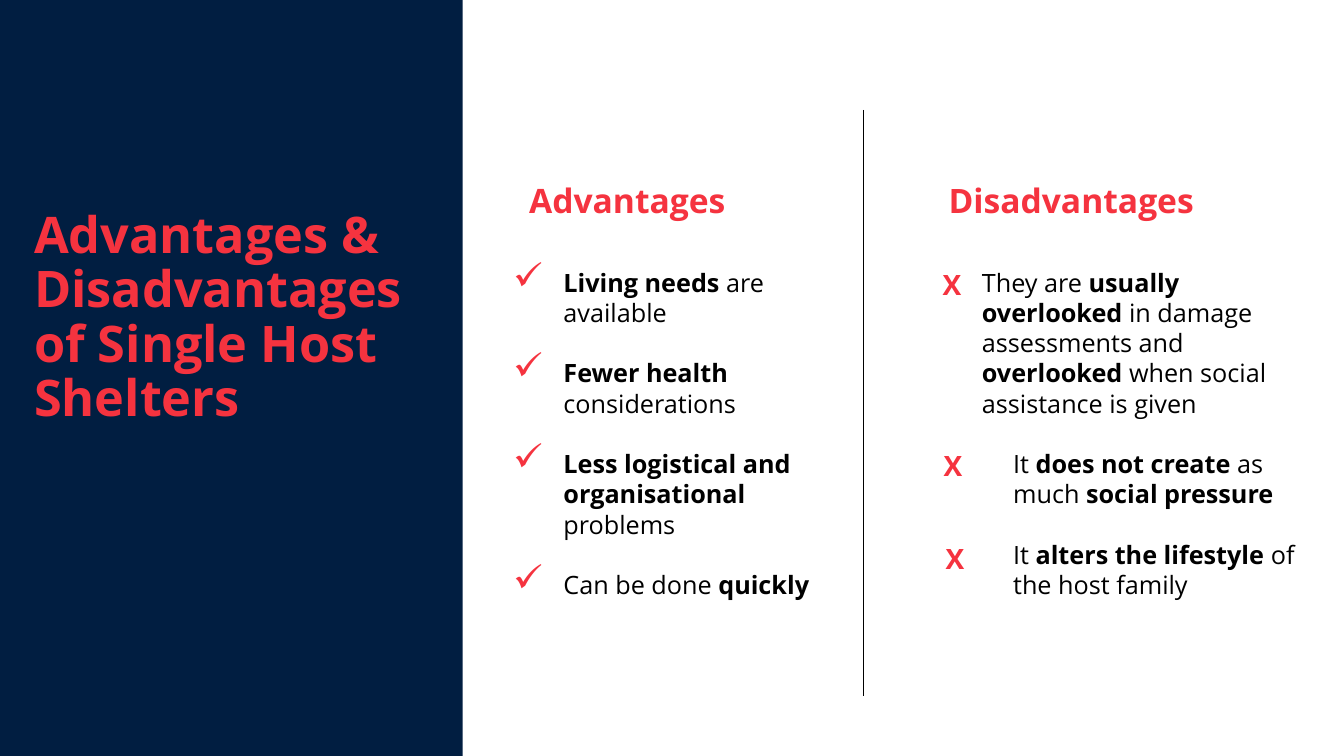
"""Build the slide on advantages and disadvantages of single host shelters."""
from lxml import etree
from pptx import Presentation
from pptx.dml.color import RGBColor
from pptx.enum.shapes import MSO_CONNECTOR, MSO_SHAPE
from pptx.enum.text import MSO_ANCHOR
from pptx.oxml.ns import qn
from pptx.util import Inches, Pt

NAVY = RGBColor(0x01, 0x1E, 0x41)
RED = RGBColor(0xF5, 0x33, 0x3F)
BLACK = RGBColor(0, 0, 0)
RECTANGLE = MSO_SHAPE.RECTANGLE
STRAIGHT = MSO_CONNECTOR.STRAIGHT
TOP, MIDDLE = MSO_ANCHOR.TOP, MSO_ANCHOR.MIDDLE
FONT = "Open Sans"
ITEM_GAP = 21.6

ADVANTAGES = [
    [("Living needs ", True), ("are available", False)],
    [("Fewer health ", True), ("considerations", False)],
    [("Less logistical and organisational ", True), ("problems", False)],
    [("Can be done ", False), ("quickly", True)],
]
DISADVANTAGES = [
    [("They are ", False), ("usually overlooked ", True),
     ("in damage assessments and ", False), ("overlooked", True),
     (" when social assistance is given", False)],
    [("It ", False), ("does not create", True), (" as much ", False),
     ("social pressure", True)],
    [("It ", False), ("alters the lifestyle ", True), ("of the host family", False)],
]


def add_text(paragraphs, left, top, width, height, size=18, color=BLACK,
             anchor=TOP, line_spacing=None):
    """Add a text box from lists of (text, bold) spans and return its paragraphs."""
    box = page.shapes.add_textbox(Inches(left), Inches(top), Inches(width), Inches(height))
    frame = box.text_frame
    frame.word_wrap = True
    frame.vertical_anchor = anchor
    for index, spans in enumerate(paragraphs):
        para = frame.add_paragraph() if index else frame.paragraphs[0]
        para.line_spacing = line_spacing
        if index < len(paragraphs) - 1:
            para.space_after = Pt(ITEM_GAP)
        for text, bold in spans:
            span = para.add_run()
            span.text = text
            span.font.name = FONT
            span.font.size = Pt(size)
            span.font.bold = bold
            span.font.color.rgb = color
    return frame.paragraphs


deck = Presentation()
deck.slide_width, deck.slide_height = Inches(13.33), Inches(7.5)
page = deck.slides.add_slide(deck.slide_layouts[6])

panel = page.shapes.add_shape(RECTANGLE, Inches(-0.02), Inches(-0.01), Inches(4.61), Inches(7.51))
panel.shadow.inherit = False
panel.fill.solid()
panel.fill.fore_color.rgb = NAVY
panel.line.fill.background()

add_text([[("Advantages & Disadvantages of Single Host Shelters", True)]],
         0.24, 0.7, 3.92, 4.92, size=36, color=RED, anchor=MIDDLE, line_spacing=0.9)

for heading, left, width in [("Advantages", 5.15, 2.51), ("Disadvantages", 9.31, 3.07)]:
    add_text([[(heading, True)]], left, 1.74, width, 0.5, size=24, color=RED)

for para in add_text(ADVANTAGES, 4.99, 2.6, 3.35, 3.43):
    properties = para._p.get_or_add_pPr()
    properties.set("marL", str(Inches(0.5)))
    properties.set("indent", str(Inches(-0.5)))
    bullet_color = etree.SubElement(properties, qn("a:buClr"))
    etree.SubElement(bullet_color, qn("a:srgbClr"), val=str(RED))
    etree.SubElement(properties, qn("a:buSzPct"), val="150000")
    etree.SubElement(properties, qn("a:buChar"), char="✓")

for para in add_text(DISADVANTAGES, 9.64, 2.6, 3.35, 3.43)[1:]:
    para._p.get_or_add_pPr().set("marL", str(Inches(0.31)))

for left, top in [(9.25, 2.6), (9.26, 4.4), (9.28, 5.32)]:
    add_text([[("X", True)]], left, top, 0.6, 0.44, size=20, color=RED)

divider = page.shapes.add_connector(STRAIGHT, Inches(8.56), Inches(1.09), Inches(8.56), Inches(6.9))
divider.line.color.rgb = BLACK
divider.line.width = Pt(0.75)
etree.SubElement(divider._element.spPr, qn("a:effectLst"))

deck.save("out.pptx")
